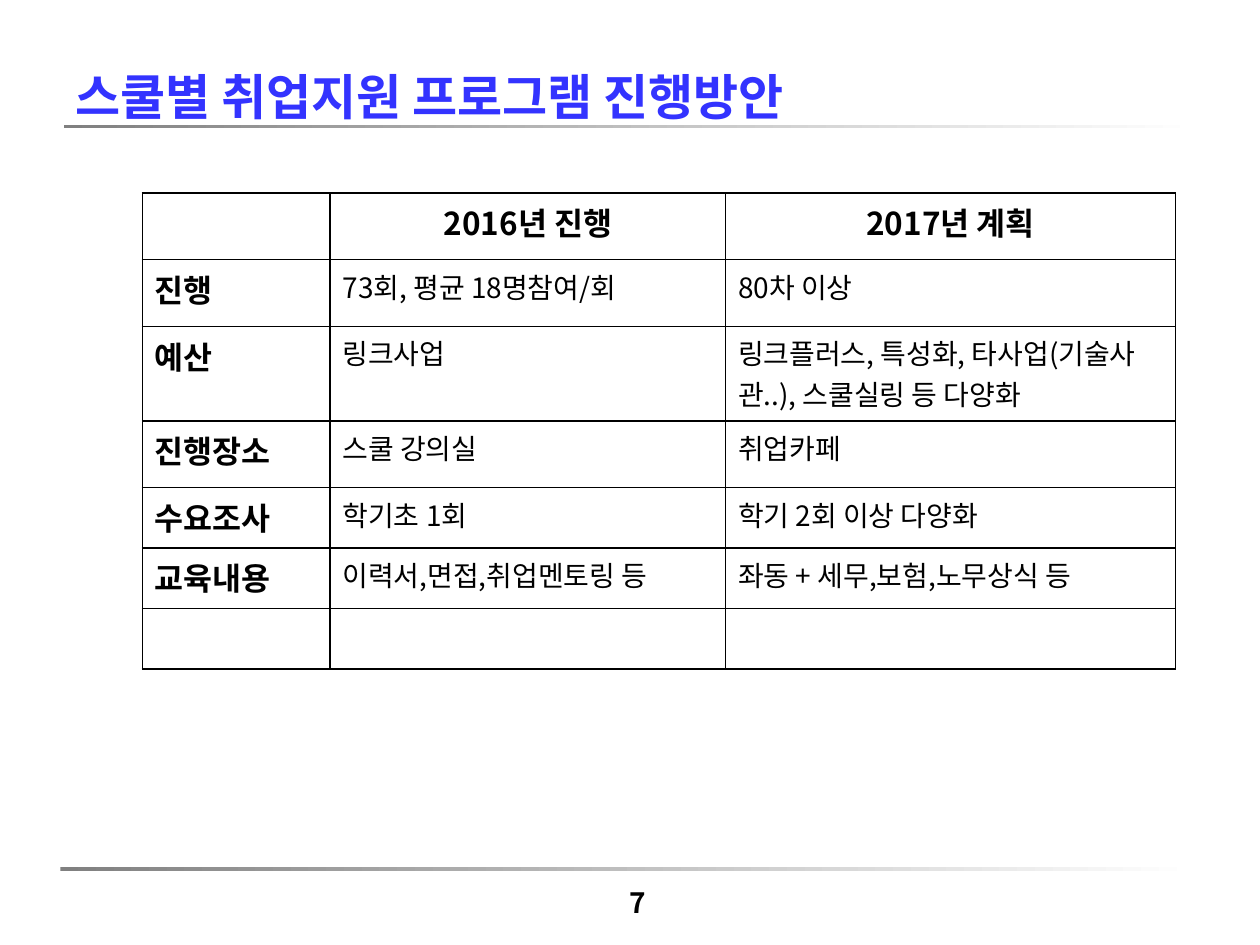
from lxml import etree
from pptx import Presentation
from pptx.dml.color import RGBColor
from pptx.enum.shapes import MSO_SHAPE
from pptx.enum.text import PP_ALIGN
from pptx.oxml.ns import qn
from pptx.util import Inches, Pt

RECT = MSO_SHAPE.RECTANGLE
LEFT, CENTER = PP_ALIGN.LEFT, PP_ALIGN.CENTER
FONT = "Noto Sans CJK KR"
COLORS = {"title": "3333FF", "text": "000000", "rule": "808080", "paper": "FFFFFF"}
COL_WIDTHS = [1.49, 3.14, 3.57]
ROW_HEIGHTS = [0.53, 0.53, 0.75, 0.53, 0.48, 0.48, 0.48]
ROWS = [
    ["", "2016년 진행", "2017년 계획"],
    ["진행", "73회, 평균 18명참여/회", "80차 이상"],
    ["예산", "링크사업", "링크플러스, 특성화, 타사업(기술사관..), 스쿨실링 등 다양화"],
    ["진행장소", "스쿨 강의실", "취업카페"],
    ["수요조사", "학기초 1회", "학기 2회 이상 다양화"],
    ["교육내용", "이력서,면접,취업멘토링 등", "좌동 + 세무,보험,노무상식 등"],
    ["", "", ""],
]


def rgb(name):
    return RGBColor.from_string(COLORS[name])


def write(tf, text, size, color="text", bold=False, align=LEFT):
    p = tf.paragraphs[0]
    p.text = text
    p.alignment = align
    font = p.font
    font.name, font.size, font.bold = FONT, Pt(size), bold
    font.color.rgb = rgb(color)
    latin = p._p.pPr.find(qn("a:defRPr")).find(qn("a:latin"))
    ea = etree.Element(qn("a:ea"), typeface=FONT)
    latin.addnext(ea)
    return p


def add_rule(s, x, y, w, h):
    sp = s.shapes.add_shape(RECT, Inches(x), Inches(y), Inches(w), Inches(h))
    sp.shadow.inherit = False
    sp.line.fill.background()
    sp.fill.gradient()
    sp.fill.gradient_angle = 0
    for stop, name in zip(sp.fill.gradient_stops, ("rule", "paper")):
        stop.color.rgb = rgb(name)


def add_text(s, x, y, w, h, text, size, **style):
    tf = s.shapes.add_textbox(Inches(x), Inches(y), Inches(w), Inches(h)).text_frame
    tf.word_wrap = True
    write(tf, text, size, **style)


def set_borders(cell):
    tcPr = cell._tc.get_or_add_tcPr()
    for i, side in enumerate(("lnL", "lnR", "lnT", "lnB")):
        ln = etree.Element(qn(f"a:{side}"), w=str(Pt(1)))
        fill = etree.SubElement(ln, qn("a:solidFill"))
        etree.SubElement(fill, qn("a:srgbClr"), val=COLORS["text"])
        tcPr.insert(i, ln)


def set_space_before(p, percent):
    spacing = etree.Element(qn("a:spcBef"))
    etree.SubElement(spacing, qn("a:spcPct"), val=str(percent * 1000))
    p._p.pPr.insert(0, spacing)


def add_plan_table(s, x, y, w, h):
    table = s.shapes.add_table(
        len(ROWS), len(COL_WIDTHS), Inches(x), Inches(y), Inches(w), Inches(h)
    ).table
    for col, width in zip(table.columns, COL_WIDTHS):
        col.width = Inches(width)
    for row, height in zip(table.rows, ROW_HEIGHTS):
        row.height = Inches(height)
    for i, texts in enumerate(ROWS):
        for j, text in enumerate(texts):
            cell = table.cell(i, j)
            cell.fill.solid()
            cell.fill.fore_color.rgb = rgb("paper")
            set_borders(cell)
            if text:
                heading = i == 0 or j == 0
                p = write(cell.text_frame, text, 18 if heading else 16,
                          bold=heading, align=CENTER if i == 0 else LEFT)
                set_space_before(p, 50)


def add_header(s, x, y, w, h):
    add_rule(s, x + 0.01, y + h + 0.01, w, 0.03)
    add_text(s, x, y, w, h, "스쿨별 취업지원 프로그램 진행방안", 28,
             color="title", bold=True)


def add_footer(s, x, y, w, h):
    add_rule(s, x, y, w, 0.03)
    add_text(s, x + 3.42, y + 0.1, 2.33, h - 0.1, "7", 16, bold=True, align=CENTER)


def main():
    prs = Presentation()
    prs.slide_width, prs.slide_height = Inches(10), Inches(7.5)
    s = prs.slides.add_slide(prs.slide_layouts[6])
    add_header(s, 0.5, 0.48, 9, 0.5)
    add_plan_table(s, 1.13, 1.53, sum(COL_WIDTHS), sum(ROW_HEIGHTS))
    add_footer(s, 0.48, 6.88, 9, 0.39)
    prs.save("out.pptx")


if __name__ == "__main__":
    main()
